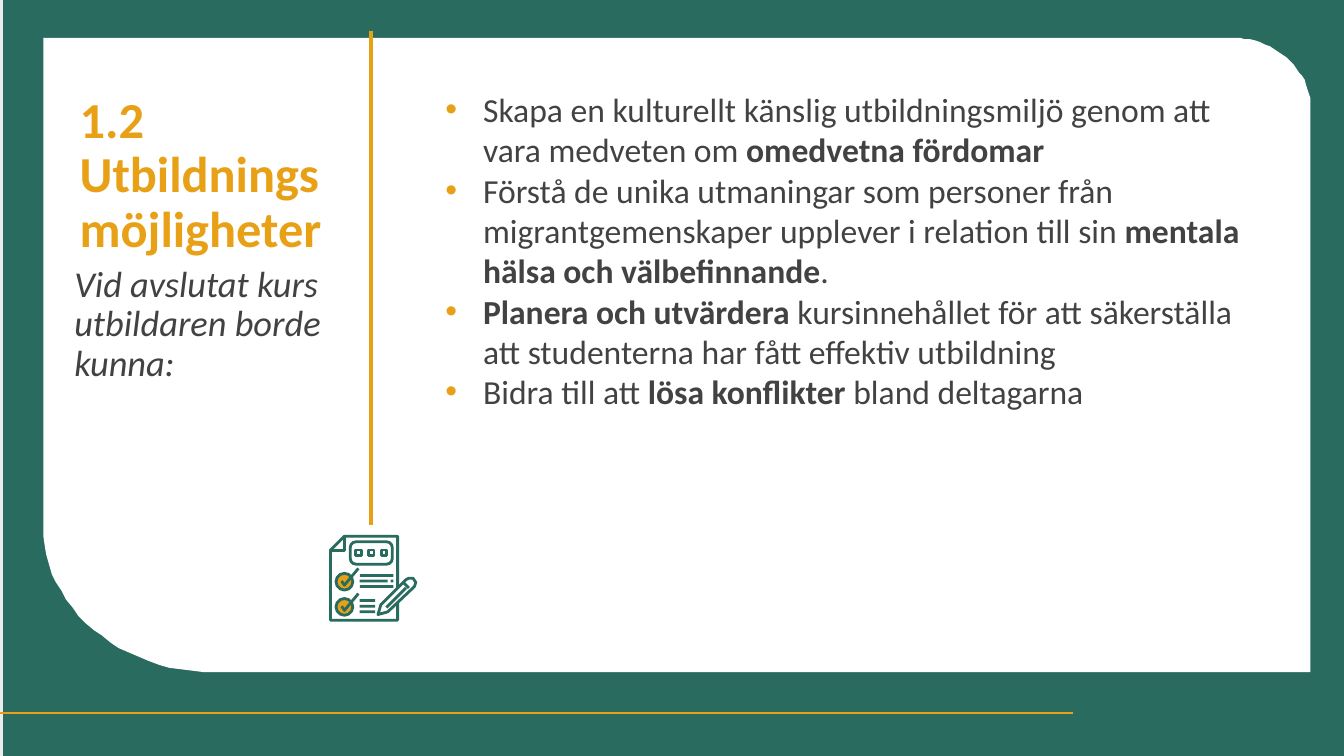
"""Build the slide on training skills, section 1.2."""
from math import cos, pi, sin

from lxml.etree import SubElement
from pptx import Presentation
from pptx.dml.color import RGBColor
from pptx.enum.shapes import MSO_CONNECTOR, MSO_SHAPE
from pptx.enum.text import MSO_ANCHOR, MSO_AUTO_SIZE, PP_ALIGN
from pptx.oxml.ns import qn
from pptx.util import Pt

GREEN, GOLD, GREY, WHITE, PALE = "296B5F", "E8A116", "424242", "FFFFFF", "ECECEC"
WIDE, HIGH = 960, 540

TITLE = "1.2 Utbildningsmöjligheter"
INTRO = "Vid avslutat kurs utbildaren borde kunna:"
GOALS = [
    [("Skapa en kulturellt känslig utbildningsmiljö genom att vara medveten om ", False),
     ("omedvetna fördomar", True)],
    [("Förstå de unika utmaningar som personer från migrantgemenskaper upplever "
      "i relation till sin ", False),
     ("mentala hälsa och välbefinnande", True), (".", False)],
    [("Planera och utvärdera ", True),
     ("kursinnehållet för att säkerställa att studenterna har fått effektiv utbildning", False)],
    [("Bidra till att ", False), ("lösa konflikter ", True), ("bland deltagarna", False)],
]

PAGE = [(246, 382.7), (284, 382.7), (284, 443.2), (235.8, 443.2), (235.8, 393)]
FOLD = [(246, 382.7), (246, 393), (235.8, 393)]
PENCIL = [(269.7, 439.2), (272.2, 431.6), (290, 414), (292.3, 412.8), (295, 413.2),
          (296.6, 415.8), (295.5, 419), (277.2, 437)]
MARKS = [[(275.5, 433.5), (289.5, 419.5)], [(288.5, 416.5), (292.5, 420.5)]]
TICK = [(-2.5, -0.5), (0, 2), (10.5, -9.5)]
BARS = [(410, [24, 20, 24]), (428, [11, 11, 11])]

deck = Presentation()
deck.slide_width, deck.slide_height = Pt(WIDE), Pt(HIGH)
slide = deck.slides.add_slide(deck.slide_layouts[5])
shapes = slide.shapes


def color(code):
    return RGBColor.from_string(code)


def paint(shape, fill=None, line=None, width=2):
    shape.shadow.inherit = False
    if fill:
        shape.fill.solid()
        shape.fill.fore_color.rgb = color(fill)
    else:
        shape.fill.background()
    if line:
        shape.line.color.rgb = color(line)
        shape.line.width = Pt(width)
    else:
        shape.line.fill.background()


def block(kind, x, y, w, h, fill=None, line=None):
    shape = shapes.add_shape(kind, Pt(x), Pt(y), Pt(w), Pt(h))
    paint(shape, fill, line)
    return shape


def trace(points, fill=None, line=None, close=True):
    pen = shapes.build_freeform(*points[0], scale=Pt(1))
    pen.add_line_segments(points[1:], close=close)
    paint(pen.convert_to_shape(), fill, line)


def rule(x, y, x2, y2, width):
    line = shapes.add_connector(MSO_CONNECTOR.STRAIGHT, Pt(x), Pt(y), Pt(x2), Pt(y2))
    line.line.color.rgb = color(GOLD)
    line.line.width = Pt(width)
    SubElement(line._element.spPr, qn("a:effectLst"))


def arc(x, y, rx, ry, start, steps=24):
    turns = [start + pi / 2 * i / steps for i in range(steps + 1)]
    return [(x + rx * cos(t), y + ry * sin(t)) for t in turns]


def place(shape, x, y, w, h):
    shape.left, shape.top, shape.width, shape.height = Pt(x), Pt(y), Pt(w), Pt(h)
    frame = shape.text_frame
    frame.word_wrap = True
    frame.auto_size = MSO_AUTO_SIZE.NONE
    frame.vertical_anchor = MSO_ANCHOR.TOP
    return frame


def style(run, size, code, bold=False, italic=False):
    font = run.font
    font.name, font.size, font.bold, font.italic = "Calibri", Pt(size), bold, italic
    font.color.rgb = color(code)


def bullet(para, indent):
    props = para._p.get_or_add_pPr()
    props.set("marL", str(Pt(indent)))
    props.set("indent", str(Pt(-indent)))
    tint = SubElement(props, qn("a:buClr"))
    SubElement(tint, qn("a:srgbClr"), val=GOLD)
    SubElement(props, qn("a:buFont"), typeface="Arial")
    SubElement(props, qn("a:buChar"), char="•")


def draw_back():
    left, top, right, base = 31, 26.6, 936, 480.2
    block(MSO_SHAPE.RECTANGLE, 0, 0, WIDE, HIGH, GREEN)
    trace([(left, top)] + arc(right - 58, top + 50, 58, 50, -pi / 2) + [(right, base)]
          + arc(left + 122, base - 104, 122, 104, pi / 2), WHITE)
    block(MSO_SHAPE.RECTANGLE, 0, 0, 2, HIGH, PALE)
    rule(0, 509, 766.5, 509, 1.5)
    rule(265, 22.4, 265, 375, 2.75)


def draw_icon():
    trace(PAGE, WHITE, GREEN)
    trace(FOLD, None, GREEN, False)
    label = block(MSO_SHAPE.ROUNDED_RECTANGLE, 250.2, 387, 30, 16, None, GREEN)
    label.adjustments[0] = 0.25
    for i in range(3):
        block(MSO_SHAPE.RECTANGLE, 254.2 + 9 * i, 392.8, 4, 4, None, GREEN)
    for y, widths in BARS:
        mid = y + 5.5
        block(MSO_SHAPE.OVAL, 240, mid - 6, 12, 12, GOLD, GREEN)
        trace([(246 + dx, mid + dy) for dx, dy in TICK], None, GREEN, False)
        for i, width in enumerate(widths):
            block(MSO_SHAPE.RECTANGLE, 257, y + 4 * i, width, 2, GREEN)
    block(MSO_SHAPE.RECTANGLE, 279, 414, 2, 2, GREEN)
    trace(PENCIL, WHITE, GREEN)
    for mark in MARKS:
        trace(mark, None, GREEN, False)


def write_text():
    title = shapes.title
    shapes._spTree.append(title._element)
    intro = shapes.add_textbox(0, 0, 0, 0)
    for shape, spot, text, size, code in [
            (title, (49.7, 64, 208, 124), TITLE, 36, GOLD),
            (intro, (46, 186.5, 199.5, 125), INTRO, 26, GREY)]:
        frame = place(shape, *spot)
        frame.text = text
        para = frame.paragraphs[0]
        para.alignment, para.line_spacing = PP_ALIGN.LEFT, 0.9
        style(para.runs[0], size, code, shape is title, shape is intro)
    frame = place(shapes.add_textbox(0, 0, 0, 0), 311, 60, 600.5, 404)
    for i, goal in enumerate(GOALS):
        para = frame.add_paragraph() if i else frame.paragraphs[0]
        bullet(para, 27)
        for text, bold in goal:
            run = para.add_run()
            run.text = text
            style(run, 24, GREY, bold)


draw_back()
draw_icon()
write_text()
deck.save("out.pptx")
